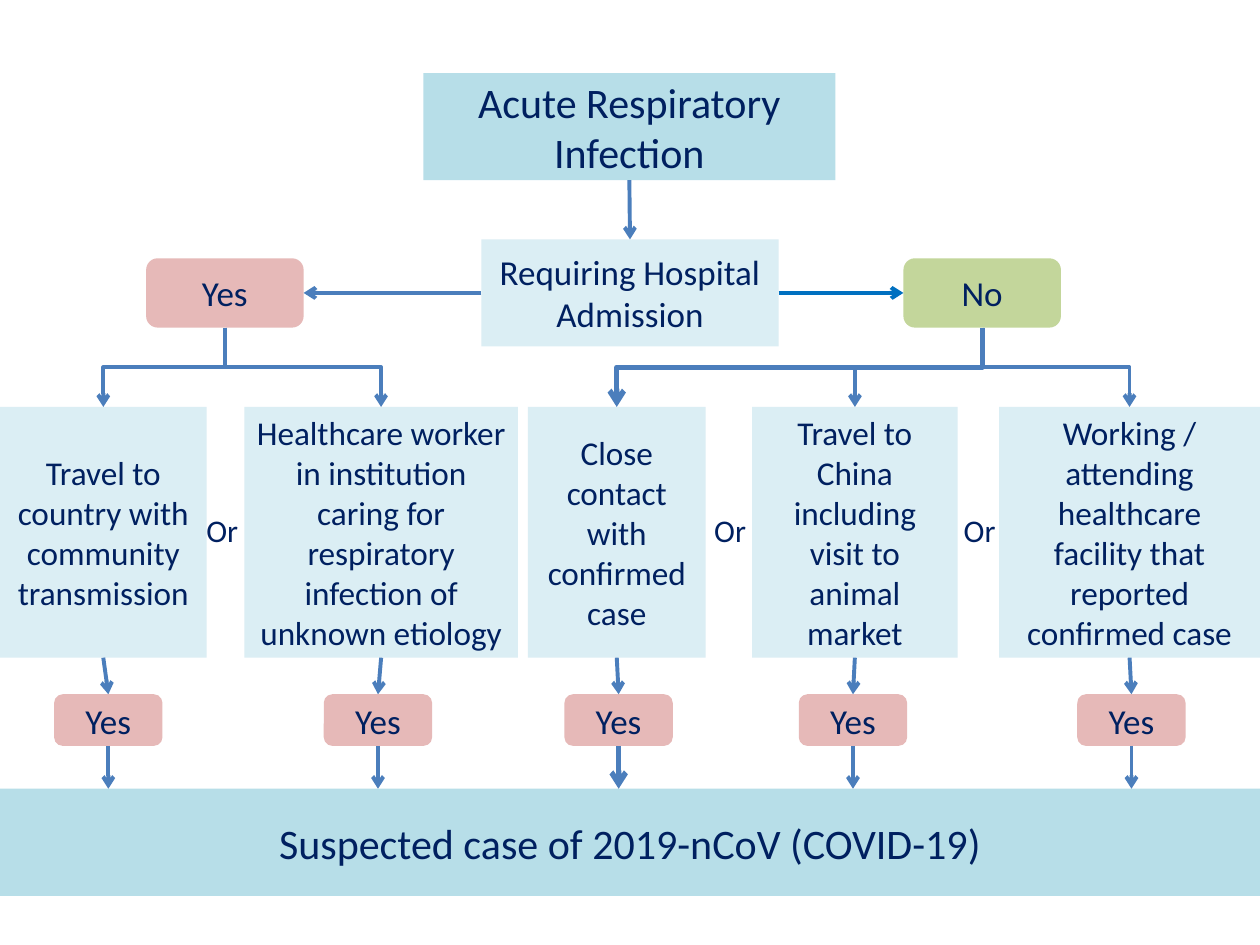
from lxml import etree
from pptx import Presentation
from pptx.dml.color import RGBColor
from pptx.enum.shapes import MSO_CONNECTOR, MSO_SHAPE
from pptx.enum.text import MSO_ANCHOR, PP_ALIGN
from pptx.oxml.ns import qn
from pptx.util import Inches, Pt

RECT, ROUND, OVAL = MSO_SHAPE.RECTANGLE, MSO_SHAPE.ROUNDED_RECTANGLE, MSO_SHAPE.OVAL
LINE, ELBOW = MSO_CONNECTOR.STRAIGHT, MSO_CONNECTOR.ELBOW
MIDDLE, CENTER = MSO_ANCHOR.MIDDLE, PP_ALIGN.CENTER
TOP, LEFT, BOTTOM, RIGHT = range(4)

INK, BLUE, BRIGHT = "002060", "4B7EBC", "0070C0"
TEAL, PALE, PINK, GREEN = "B7DEE8", "DBEEF4", "E6B9B8", "C3D69B"

HEADS = {
    "start": (RECT, "Acute Respiratory Infection", (3.36, 0.58, 3.27, 0.85), TEAL, 24),
    "ask": (RECT, "Requiring Hospital Admission", (3.82, 1.9, 2.36, 0.85), PALE, 20),
    "yes": (ROUND, "Yes", (1.16, 2.05, 1.25, 0.55), PINK, 20),
    "no": (ROUND, "No", (7.17, 2.05, 1.25, 0.55), GREEN, 20),
    "case": (RECT, "Suspected case of 2019-nCoV (COVID-19)", (0, 6.26, 10, 0.85), TEAL, 24),
}
LINKS = [
    ("start", BOTTOM, "ask", TOP, BLUE),
    ("ask", LEFT, "yes", RIGHT, BLUE),
    ("ask", RIGHT, "no", LEFT, BRIGHT),
]
RISKS = [
    ("yes", "Travel to country with community transmission", 0, 1.64, 0.86, 2.25),
    ("yes", "Healthcare worker in institution caring for respiratory infection of "
     "unknown etiology", 1.94, 2.17, 3, 2.25),
    ("no", "Travel to China including visit to animal market", 5.97, 1.63, 6.77, 2.25),
    ("no", "Working / attending healthcare facility that reported confirmed case",
     7.93, 2.07, 8.98, 2.25),
    ("no", "Close contact with confirmed case", 4.19, 1.41, 4.91, 3),
]
ORS = [(1.38, 0.77), (5.37, 0.85), (7.35, 0.85)]
RISK_TOP, RISK_HIGH = 3.23, 1.99
TAG_TOP, TAG_WIDE, TAG_HIGH = 5.51, 0.86, 0.41
CASE_TOP = HEADS["case"][2][1]


def color(code):
    return RGBColor.from_string(code)


def add_box(slide, kind, text, place, fill, size):
    box = slide.shapes.add_shape(kind, *map(Inches, place))
    box.shadow.inherit = False
    box.line.fill.background()
    if fill:
        box.fill.solid()
        box.fill.fore_color.rgb = color(fill)
    else:
        box.fill.background()
    frame = box.text_frame
    frame.word_wrap = True
    frame.vertical_anchor = MIDDLE
    para = frame.paragraphs[0]
    para.alignment = CENTER
    run = para.add_run()
    run.text = text
    for name, value in {"name": "Calibri", "size": Pt(size)}.items():
        setattr(run.font, name, value)
    run.font.color.rgb = color(INK)
    return box


def add_arrow(slide, kind, start, side, end=None, goal=TOP, spot=(0, 0),
              tint=BLUE, width=2.25):
    x, y = map(Inches, spot)
    arrow = slide.shapes.add_connector(kind, x, y, x, y)
    arrow.begin_connect(start, side)
    if end is None:
        arrow.end_x, arrow.end_y = x, y
    else:
        arrow.end_connect(end, goal)
    arrow.line.color.rgb = color(tint)
    arrow.line.width = Pt(width)
    etree.SubElement(arrow.line._get_or_add_ln(), qn("a:tailEnd"), type="arrow")
    etree.SubElement(arrow._element.spPr, qn("a:effectLst"))
    return arrow


def turn_down(arrow):
    x, y, to_x, to_y = arrow.begin_x, arrow.begin_y, arrow.end_x, arrow.end_y
    wide, high = to_y - y, abs(to_x - x)
    frame = arrow._element.spPr.find(qn("a:xfrm"))
    for name in ("flipH", "flipV"):
        frame.attrib.pop(name, None)
    if to_x < x:
        frame.set("rot", "5400000")
    else:
        frame.set("rot", "16200000")
        frame.set("flipH", "1")
    arrow.left, arrow.top = (x + to_x - wide) // 2, (y + to_y - high) // 2
    arrow.width, arrow.height = wide, high


def main():
    deck = Presentation()
    deck.slide_width, deck.slide_height = Inches(10), Inches(7.5)
    slide = deck.slides.add_slide(deck.slide_layouts[6])

    heads = {key: add_box(slide, *head) for key, head in HEADS.items()}
    for start, side, end, goal, tint in LINKS:
        add_arrow(slide, LINE, heads[start], side, heads[end], goal, tint=tint)

    for head, text, left, wide, mid, width in RISKS:
        risk = add_box(slide, RECT, text, (left, RISK_TOP, wide, RISK_HIGH), PALE, 19)
        place = (mid - TAG_WIDE / 2, TAG_TOP, TAG_WIDE, TAG_HIGH)
        tag = add_box(slide, ROUND, "Yes", place, PINK, 20)
        turn_down(add_arrow(slide, ELBOW, heads[head], BOTTOM, risk, width=width))
        add_arrow(slide, LINE, risk, BOTTOM, tag)
        add_arrow(slide, LINE, tag, BOTTOM, spot=(mid, CASE_TOP), width=width)

    for left, wide in ORS:
        add_box(slide, OVAL, "Or", (left, 3.88, wide, 0.66), None, 18)

    deck.save("out.pptx")


if __name__ == "__main__":
    main()
